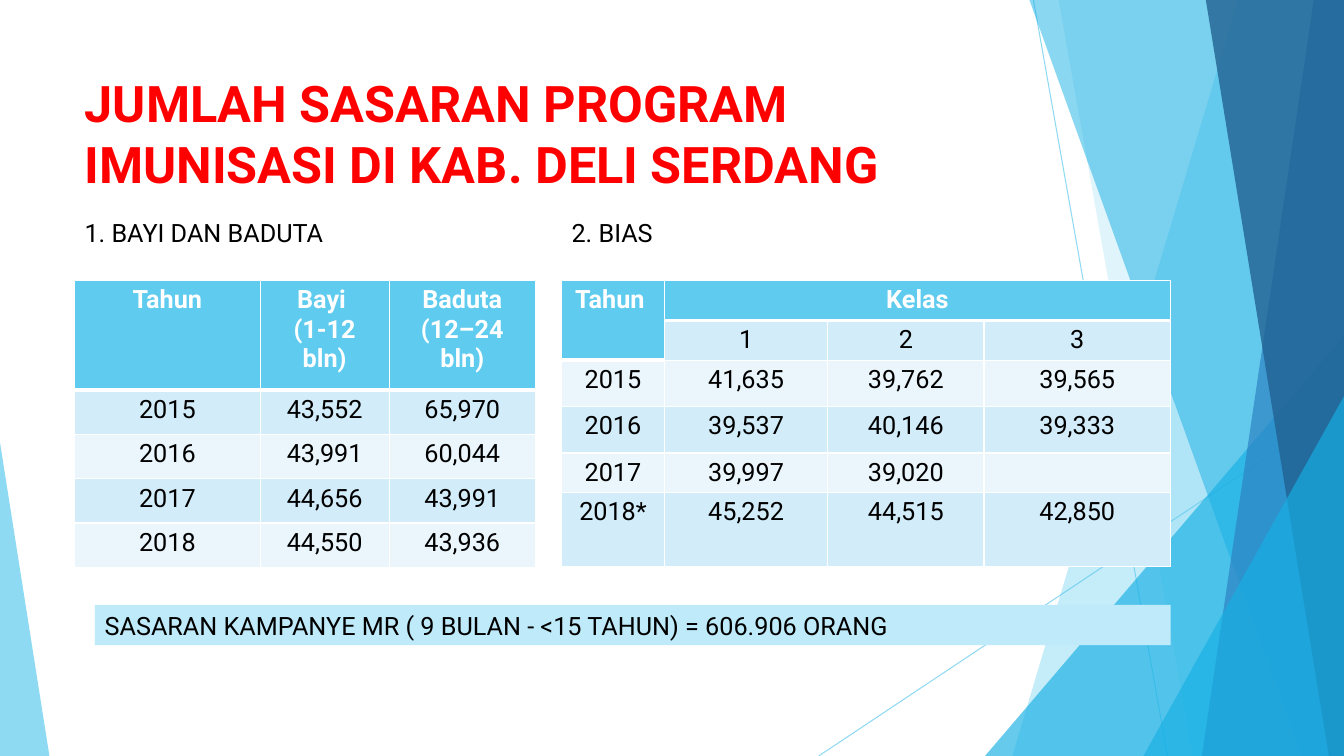
"""Build the slide on immunisation target numbers in Deli Serdang."""
import dataclasses
import typing

import lxml.etree
import pptx
import pptx.dml.color
import pptx.enum.shapes
import pptx.enum.text
import pptx.oxml.ns
import pptx.util

SCALE = 9144
WIDE, HIGH = 1333, 750
COLORS = {
    "sky": "5FCBEF", "cyan": "17B0E4", "blue": "2E83C3", "navy": "226292",
    "red": "FF0000", "black": "000000", "white": "FFFFFF",
    "odd": "D2ECF9", "even": "EAF6FC", "band": "BFEAF9",
}
PLAIN = {"name": "Roboto", "size": pptx.util.Pt(18), "bold": False}
STRONG = PLAIN | {"bold": True}
TITLE = STRONG | {"size": pptx.util.Pt(36)}
ALIGN = pptx.enum.text.PP_ALIGN
Box = tuple[int, int, int, int]
Point = tuple[int, int]


@dataclasses.dataclass
class Line:
    """Thin slanted line."""
    start: Point
    end: Point


@dataclasses.dataclass
class Shard:
    """Sheer pane with straight sides."""
    points: list[Point]
    color: str
    alpha: int


@dataclasses.dataclass
class Wedge:
    """Sheer right triangle with its tip at one side."""
    box: Box
    tip: int
    color: str
    alpha: int


@dataclasses.dataclass
class Grid:
    """Table with its sizes, merged areas and cell texts."""
    spot: Point
    cols: list[int]
    rows: list[int]
    cells: list[list[str]]
    spans: list[Box] = dataclasses.field(default_factory=list)


@dataclasses.dataclass
class Label:
    """Single line of text."""
    box: Box
    text: str


DECOR = [
    Line((1025, 0), (1158, HIGH)),
    Line((WIDE, 403), (812, HIGH)),
    Shard([(1228, 0), (WIDE, 0), (WIDE, HIGH), (1004, HIGH)], "sky", 36),
    Shard([(1050, 0), (WIDE, 0), (WIDE, HIGH), (1183, HIGH)], "sky", 20),
    Wedge((977, 333, 356, 417), 1, "cyan", 66),
    Shard([(1021, 0), (WIDE, 0), (WIDE, HIGH), (1291, HIGH)], "cyan", 50),
    Shard([(1303, 0), (WIDE, 0), (WIDE, HIGH), (1192, HIGH)], "blue", 70),
    Shard([(1196, 0), (WIDE, 0), (WIDE, HIGH), (1318, HIGH)], "navy", 80),
    Wedge((1134, 393, 199, 357), 1, "cyan", 66),
    Wedge((0, 439, 49, 311), 0, "sky", 70),
]
GRIDS = [
    Grid((74, 278), [184, 128, 145], [109, 44, 44, 44, 44], [
        ["Tahun", "Bayi \n(1-12 bln)", "Baduta\n(12–24 bln)"],
        ["2015", "43,552", "65,970"],
        ["2016", "43,991", "60,044"],
        ["2017", "44,656", "43,991"],
        ["2018", "44,550", "43,936"],
    ]),
    Grid((557, 278), [102, 162, 155, 185], [40, 39, 46, 46, 39, 73], [
        ["Tahun ", "Kelas", "", ""],
        ["", "1", "2", "3"],
        ["2015", "41,635", "39,762", "39,565"],
        ["2016", "39,537", "40,146", "39,333"],
        ["2017", "39,997", "39,020", ""],
        ["2018*", "45,252", "44,515", "42,850"],
    ], [(0, 0, 1, 0), (0, 1, 0, 3)]),
]
HEADS = [
    Label((74, 211, 457, 40), "1. BAYI DAN BADUTA"),
    Label((557, 211, 605, 40), "2. BIAS"),
]
BAND = Label((94, 600, 1067, 40),
             "SASARAN KAMPANYE MR ( 9 BULAN - <15 TAHUN) = 606.906 ORANG")


def px(*sizes: int) -> list[int]:
    """Turn px into EMU."""
    return [size * SCALE for size in sizes]


def tint(name: str) -> pptx.dml.color.RGBColor:
    """Look up a colour by name."""
    return pptx.dml.color.RGBColor.from_string(COLORS[name])


def node(parent: typing.Any, tag: str, **values: str) -> typing.Any:
    """Add an XML child."""
    return lxml.etree.SubElement(parent, pptx.oxml.ns.qn(tag), values)


def fade(root: typing.Any, alpha: int) -> None:
    """Make the first colour under root sheer."""
    color = next(root.iter(pptx.oxml.ns.qn("a:srgbClr")))
    node(color, "a:alpha", val=str(alpha * 1000))


def write(frame: typing.Any, text: str, look: dict, color: str, align: ALIGN) -> None:
    """Fill a text frame and format it."""
    frame.text = text
    for para in frame.paragraphs:
        para.alignment = align
        for key, value in look.items():
            setattr(para.font, key, value)
        para.font.color.rgb = tint(color)
        for run in para.runs:
            for key, value in look.items():
                setattr(run.font, key, value)
            run.font.color.rgb = tint(color)


def paint(shape: typing.Any, color: str) -> None:
    """Give a shape a flat fill with no line or shadow."""
    shape.shadow.inherit = False
    shape.fill.solid()
    shape.fill.fore_color.rgb = tint(color)
    shape.line.fill.background()


def draw_part(shapes: typing.Any, part: Line | Shard | Wedge) -> None:
    """Draw one part of the backdrop."""
    if isinstance(part, Line):
        line = shapes.add_connector(pptx.enum.shapes.MSO_CONNECTOR.STRAIGHT,
                                    *px(*part.start, *part.end))
        line.line.width = pptx.util.Pt(0.75)
        line.line.color.rgb = tint("sky")
        fade(line.line._get_or_add_ln(), 70)
        node(line._element.spPr, "a:effectLst")
        return
    if isinstance(part, Shard):
        pen = shapes.build_freeform(*part.points[0], scale=SCALE)
        pen.add_line_segments(part.points[1:], close=True)
        shape = pen.convert_to_shape()
    else:
        shape = shapes.add_shape(pptx.enum.shapes.MSO_SHAPE.ISOSCELES_TRIANGLE,
                                 *px(*part.box))
        shape.adjustments[0] = part.tip
    paint(shape, part.color)
    fade(shape._element.spPr, part.alpha)


def edge(cell: typing.Any, head: bool) -> None:
    """Give a cell white borders, thick below a head cell."""
    props = cell._tc.get_or_add_tcPr()
    for side in "LRTB":
        points = 3 if head and side == "B" else 1
        line = node(props, f"a:ln{side}", w=str(pptx.util.Pt(points)))
        node(node(line, "a:solidFill"), "a:srgbClr", val=COLORS["white"])


def draw_grid(shapes: typing.Any, grid: Grid) -> None:
    """Draw one table."""
    size = sum(grid.cols), sum(grid.rows)
    table = shapes.add_table(len(grid.rows), len(grid.cols),
                             *px(*grid.spot, *size)).table
    for col, width in zip(table.columns, px(*grid.cols)):
        col.width = width
    for row, height in zip(table.rows, px(*grid.rows)):
        row.height = height
    for top, left, low, right in grid.spans:
        table.cell(top, left).merge(table.cell(low, right))
    for r, texts in enumerate(grid.cells):
        for c, text in enumerate(texts):
            cell = table.cell(r, c)
            head = r == 0 or cell.is_spanned
            edge(cell, head)
            cell.fill.solid()
            cell.fill.fore_color.rgb = tint("sky" if head else "odd" if r % 2 else "even")
            write(cell.text_frame, text, STRONG if head else PLAIN,
                  "white" if head else "black", ALIGN.CENTER)


def draw_label(shape: typing.Any, label: Label) -> None:
    """Put a label's text in its shape."""
    shape.text_frame.word_wrap = True
    write(shape.text_frame, label.text, PLAIN, "black", ALIGN.LEFT)


def main() -> None:
    """Build and save the slide."""
    deck = pptx.Presentation()
    deck.slide_width, deck.slide_height = px(WIDE, HIGH)
    slide = deck.slides.add_slide(deck.slide_layouts[5])
    shapes = slide.shapes
    for part in DECOR:
        draw_part(shapes, part)
    title = shapes.title
    title.left, title.top, title.width, title.height = px(74, 67, 940, 144)
    title.text_frame.auto_size = pptx.enum.text.MSO_AUTO_SIZE.NONE
    title.text_frame.vertical_anchor = pptx.enum.text.MSO_ANCHOR.TOP
    write(title.text_frame, "JUMLAH SASARAN PROGRAM IMUNISASI DI KAB. DELI SERDANG",
          TITLE, "red", ALIGN.LEFT)
    for grid in GRIDS:
        draw_grid(shapes, grid)
    for head in HEADS:
        draw_label(shapes.add_textbox(*px(*head.box)), head)
    band = shapes.add_shape(pptx.enum.shapes.MSO_SHAPE.RECTANGLE, *px(*BAND.box))
    paint(band, "band")
    draw_label(band, BAND)
    deck.save("out.pptx")


if __name__ == "__main__":
    main()
